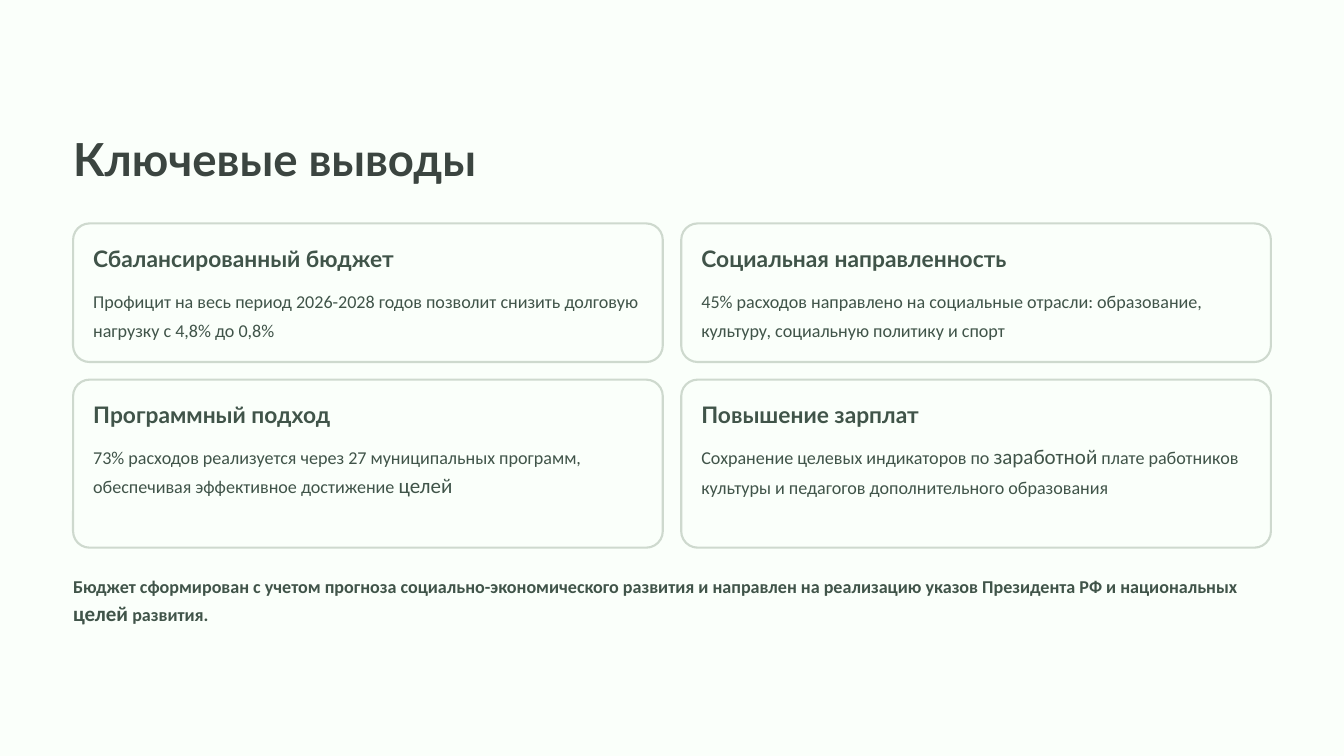
from pptx import Presentation
from pptx.dml.color import RGBColor
from pptx.enum.shapes import MSO_SHAPE
from pptx.util import Inches, Pt

COLORS = {"page": "FAFFFA", "border": "CED9CE", "title": "3B4540", "text": "405449"}
TITLE = {"name": "Lato", "size": Pt(39), "bold": True}
HEADING = {"name": "Lato", "size": Pt(19.5), "bold": True}
BODY = {"name": "Calibri", "size": Pt(15.5), "bold": False}
SUMMARY = {**BODY, "bold": True}
LARGE = Pt(18)

LEFT, CARD_WIDTH, COLUMN_STEP, PADDING = 0.87, 7.02, 7.24, 0.24
CORNER_RADIUS = 0.196

# Each row: top, height, cards; odd-numbered body pieces are set larger.
ROWS = [
    (2.66, 1.65, [
        ("Сбалансированный бюджет", 4.01, 0.69,
         ["Профицит на весь период 2026-2028 годов позволит снизить "
          "долговую нагрузку с 4,8% до 0,8%"]),
        ("Социальная направленность", 4.13, 0.69,
         ["45% расходов направлено на социальные отрасли: образование, "
          "культуру, социальную политику и спорт"]),
    ]),
    (4.52, 2, [
        ("Программный подход", 3.16, 0.69,
         ["73% расходов реализуется через 27 муниципальных программ, "
          "обеспечивая эффективное достижение ", "целей"]),
        ("Повышение зарплат", 2.94, 1.04,
         ["Сохранение целевых индикаторов по ", "заработной",
          " плате работников культуры и педагогов дополнительного образования"]),
    ]),
]

deck = Presentation()
deck.slide_width, deck.slide_height = Inches(16), Inches(9)
page = deck.slides.add_slide(deck.slide_layouts[6])
page.background.fill.solid()
page.background.fill.fore_color.rgb = RGBColor.from_string(COLORS["page"])


def add_text(place, pieces, style, spacing, color="text", wrap=True):
    """Add a one-paragraph box; every second piece is in the larger size."""
    box = page.shapes.add_textbox(*[Inches(length) for length in place])
    frame = box.text_frame
    frame.word_wrap = wrap
    for side in ("left", "top", "right", "bottom"):
        setattr(frame, f"margin_{side}", 0)
    para = frame.paragraphs[0]
    para.line_spacing = Pt(spacing)
    for index, piece in enumerate(pieces):
        span = para.add_run()
        span.text = piece
        for name, value in style.items():
            setattr(span.font, name, value)
        if index % 2:
            span.font.size = LARGE
        span.font.color.rgb = RGBColor.from_string(COLORS[color])


add_text((LEFT, 1.54, 5.43, 0.68), ["Ключевые выводы"], TITLE, 48.5, "title", wrap=False)

for top, height, cards in ROWS:
    for column, (heading, heading_width, body_height, body) in enumerate(cards):
        left = LEFT + column * COLUMN_STEP
        card = page.shapes.add_shape(
            MSO_SHAPE.ROUNDED_RECTANGLE,
            Inches(left), Inches(top), Inches(CARD_WIDTH), Inches(height))
        card.adjustments[0] = CORNER_RADIUS / height
        card.shadow.inherit = False
        card.fill.solid()
        card.fill.fore_color.rgb = RGBColor.from_string(COLORS["page"])
        card.line.color.rgb = RGBColor.from_string(COLORS["border"])
        card.line.width = Pt(1.8)

        text_left = left + PADDING
        add_text((text_left, top + PADDING, heading_width, 0.34),
                 [heading], HEADING, 24, wrap=False)
        add_text((text_left, top + 0.71, CARD_WIDTH - 2 * PADDING, body_height),
                 body, BODY, 25)

add_text((LEFT, 6.76, COLUMN_STEP + CARD_WIDTH, 0.69),
         ["Бюджет сформирован с учетом прогноза социально-экономического развития "
          "и направлен на реализацию указов Президента РФ и национальных ",
          "целей", " развития."],
         SUMMARY, 25)

deck.save("out.pptx")
